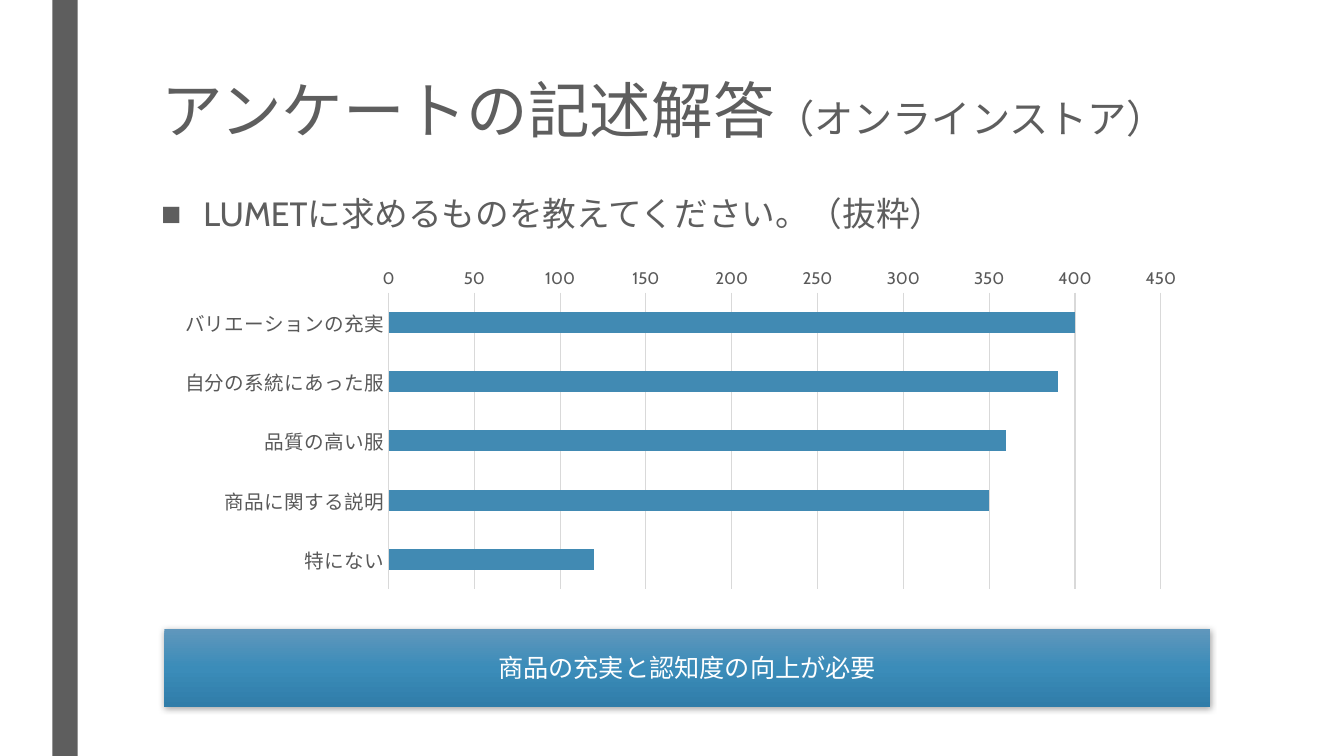
from pptx import Presentation
from pptx.chart.data import CategoryChartData as ChartData
from pptx.dml.color import RGBColor
from pptx.enum.chart import XL_CHART_TYPE as Kind, XL_TICK_MARK as Tick
from pptx.enum.shapes import MSO_SHAPE as Shape
from pptx.enum.text import MSO_ANCHOR as Anchor, PP_ALIGN as Align
from pptx.oxml import parse_xml
from pptx.util import Inches, Pt

FONT, GREY, BLUE, RULE = "Cabin", "5E5E5E", "418AB3", "D9D9D9"
TITLE = [("アンケートの記述解答", 44), ("（オンラインストア）", 28)]
ASK = [("LUMETに求めるものを教えてください。（抜粋）", 24)]
NOTE = [("商品の充実と認知度の向上が必要", 18)]
WANTS = {
    "バリエーションの充実": 400,
    "自分の系統にあった服": 390,
    "品質の高い服": 360,
    "商品に関する説明": 350,
    "特にない": 120,
}
SHADES = [(0, "6097BC"), (50, "3B8CB9"), (100, "307DA9")]
BAR_AT = (0.52, 0, 0.25, 7.5)
TITLE_AT = (1.5, 0.75, 10.5, 1.62)
ASK_AT = (1.5, 1.83, 10.5, 0.77)
CHART_AT = (1.63, 2.6, 10.24, 3.31)
NOTE_AT = (1.63, 6.24, 10.37, 0.77)
NS = 'xmlns:a="http://schemas.openxmlformats.org/drawingml/2006/main"'


def rgb(code):
    return RGBColor.from_string(code)


def box(at):
    return [Inches(n) for n in at]


def style(obj, **values):
    for name, value in values.items():
        setattr(obj, name, value)


def set_font(font, size, color):
    style(font, name=FONT, size=Pt(size))
    font.color.rgb = rgb(color)


def write(frame, runs, color, **form):
    """Fill the first paragraph with (text, size) runs."""
    frame.word_wrap = True
    para = frame.paragraphs[0]
    style(para, **form)
    for text, size in runs:
        run = para.add_run()
        run.text = text
        set_font(run.font, size, color)
    return para


def add_rect(slide, at):
    return slide.shapes.add_shape(Shape.RECTANGLE, *box(at))


def add_bullet(para):
    props = para._p.get_or_add_pPr()
    indent = Inches(0.42)
    props.set("marL", str(indent))
    props.set("indent", str(-indent))
    props.append(parse_xml(f'<a:buFont {NS} typeface="Arial"/>'))
    props.append(parse_xml(f'<a:buChar {NS} char="■"/>'))


def add_chart(slide):
    data = ChartData()
    data.categories = list(WANTS)
    data.add_series("Series 1", list(WANTS.values()))
    chart = slide.shapes.add_chart(Kind.BAR_CLUSTERED, *box(CHART_AT), data).chart
    style(chart, has_legend=False, has_title=False)
    set_font(chart.font, 10, "000000")

    plot = chart.plots[0]
    style(plot, gap_width=182, vary_by_categories=False)
    fill = plot.series[0].format.fill
    fill.solid()
    fill.fore_color.rgb = rgb(BLUE)

    cats, vals = chart.category_axis, chart.value_axis
    for axis, size in ((cats, 14), (vals, 12)):
        style(axis, major_tick_mark=Tick.NONE, minor_tick_mark=Tick.NONE)
        set_font(axis.tick_labels.font, size, "595959")
    style(cats, reverse_order=True, has_major_gridlines=False)
    style(vals, minimum_scale=0, maximum_scale=450, major_unit=50,
          has_major_gridlines=True)
    vals.format.line.fill.background()
    for part in (cats, vals.major_gridlines):
        part.format.line.color.rgb = rgb(RULE)
        part.format.line.width = Pt(0.75)


def add_note(slide):
    rect = add_rect(slide, NOTE_AT)
    stops = "".join(
        f'<a:gs pos="{pos * 1000}"><a:srgbClr val="{code}"/></a:gs>'
        for pos, code in SHADES)
    props = rect._element.spPr
    props.append(parse_xml(
        f'<a:gradFill {NS} rotWithShape="1"><a:gsLst>{stops}</a:gsLst>'
        '<a:lin ang="5400000" scaled="0"/></a:gradFill>'))
    rect.line.fill.background()
    props.append(parse_xml(
        f'<a:effectLst {NS}><a:outerShdw blurRad="{Pt(4.5)}" dist="{Pt(1.5)}" '
        'dir="5400000" rotWithShape="0"><a:srgbClr val="000000">'
        '<a:alpha val="35000"/></a:srgbClr></a:outerShdw></a:effectLst>'))
    rect.text_frame.vertical_anchor = Anchor.MIDDLE
    write(rect.text_frame, NOTE, "FFFFFF", alignment=Align.CENTER)


def main():
    deck = Presentation()
    style(deck, slide_width=Inches(13.33), slide_height=Inches(7.5))
    slide = deck.slides.add_slide(deck.slide_layouts[6])

    bar = add_rect(slide, BAR_AT)
    bar.shadow.inherit = False
    bar.fill.solid()
    bar.fill.fore_color.rgb = rgb(GREY)
    bar.line.fill.background()

    title = slide.shapes.add_textbox(*box(TITLE_AT))
    write(title.text_frame, TITLE, GREY, line_spacing=0.89)
    ask = slide.shapes.add_textbox(*box(ASK_AT))
    add_bullet(write(ask.text_frame, ASK, GREY, line_spacing=1.1,
                     space_before=Pt(10), space_after=Pt(2)))
    add_chart(slide)
    add_note(slide)
    deck.save("out.pptx")


if __name__ == "__main__":
    main()
